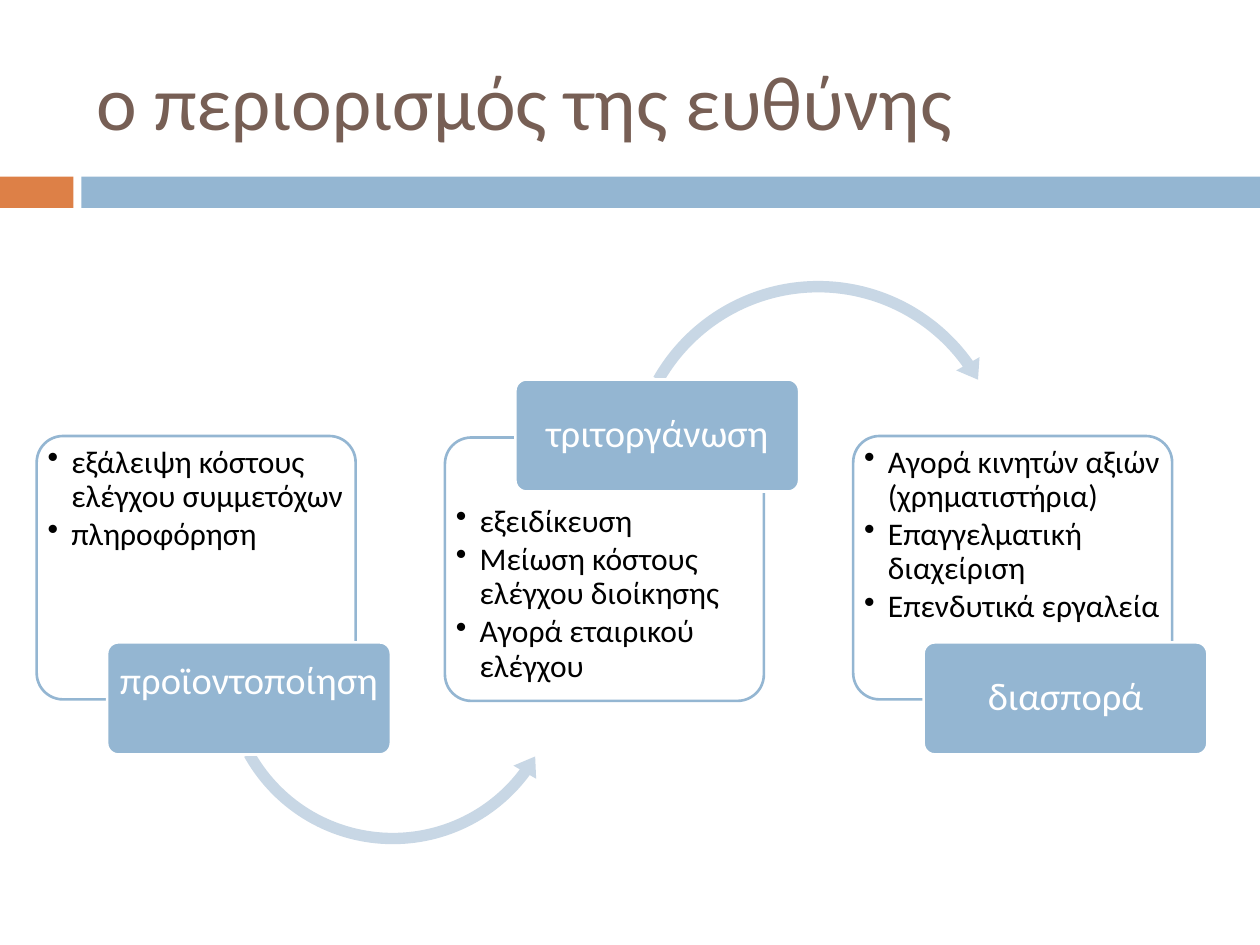
import pptx
import pptx.util
import pptx.oxml
import pptx.oxml.ns
import pptx.dml.color
import pptx.enum.shapes
import pptx.enum.text

Cm = pptx.util.Cm
Pt = pptx.util.Pt
RGB = pptx.dml.color.RGBColor
KIND = pptx.enum.shapes.MSO_SHAPE
ALIGN = pptx.enum.text.PP_ALIGN
MID = pptx.enum.text.MSO_ANCHOR.MIDDLE

BLUE = RGB(0x94, 0xB6, 0xD2)
PALE = RGB(0xC8, 0xD7, 0xE5)
RUST = RGB(0xDD, 0x80, 0x47)
BROWN = RGB(0x77, 0x5F, 0x55)
WHITE = RGB(0xFF, 0xFF, 0xFF)
BLACK = RGB(0, 0, 0)

LEFT, PITCH = 0.74, 8.23
LOW, HIGH = 12.95, 7.65
CARDS = [
    ("προϊοντοποίηση", LOW, 8.79, 8.89, 0.74,
     ["εξάλειψη κόστους ελέγχου συμμετόχων", "πληροφόρηση"]),
    ("τριτοργάνωση", HIGH, 8.82, 10.08, 0.08,
     ["εξειδίκευση", "Μείωση κόστους ελέγχου διοίκησης",
      "Αγορά εταιρικού ελέγχου"]),
    ("διασπορά", LOW, 8.79, 8.89, 0.08,
     ["Αγορά κινητών αξιών (χρηματιστήρια)", "Επαγγελματική διαχείριση",
      "Επενδυτικά εργαλεία"]),
]
ARROWS = [
    (KIND.LEFT_CIRCULAR_ARROW, (4.34, 10.01, 7.16, 7.16),
     (0.032, 3.947, 21.977, 90.52, 0.037)),
    (KIND.CIRCULAR_ARROW, (12.52, 5.51, 7.95, 7.95),
     (0.029, 3.526, 194.719, 125.755, 0.034)),
]


def apply(item, form):
    for key, val in form.items():
        setattr(item, key, val)


def add_shape(slide, kind, box, fill, line=None, adjust=()):
    shape = slide.shapes.add_shape(kind, *map(Cm, box))
    shape.shadow.inherit = False
    shape.fill.solid()
    shape.fill.fore_color.rgb = fill
    if line is None:
        shape.line.fill.background()
    else:
        shape.line.color.rgb = line
        shape.line.width = Pt(1.5)
    for spot, val in enumerate(adjust):
        shape.adjustments[spot] = val
    return shape


def add_text(slide, box, lines, size, color, frame, para, bullet=False):
    text = slide.shapes.add_textbox(*map(Cm, box)).text_frame
    apply(text, {"word_wrap": True, **frame})
    for spot, line in enumerate(lines):
        item = text.add_paragraph() if spot else text.paragraphs[0]
        item.text = line
        apply(item, para)
        if bullet:
            add_bullet(item)
        apply(item.runs[0].font, {"size": Pt(size), "name": "Calibri"})
        item.runs[0].font.color.rgb = color


def add_bullet(item):
    props = item._p.get_or_add_pPr()
    props.set("marL", str(Cm(0.48)))
    props.set("indent", str(-Cm(0.48)))
    mark = pptx.oxml.parse_xml(
        "<a:buChar %s char='•'/>" % pptx.oxml.ns.nsdecls("a"))
    props.append(mark)


def add_card(slide, left, top, words, lines):
    card = add_shape(slide, KIND.ROUNDED_RECTANGLE, (left, top, 6.43, 5.31),
                     WHITE, BLUE, [0.1])
    tint = card.fill._xPr.find(".//" + pptx.oxml.ns.qn("a:srgbClr"))
    tint.append(pptx.oxml.parse_xml(
        "<a:alpha %s val='90000'/>" % pptx.oxml.ns.nsdecls("a")))
    sides = ("left", "right", "top", "bottom")
    add_text(slide, (left + 0.12, words, 6.2, 3.91), lines, 18, BLACK,
             {"margin_" + side: Cm(0.1) for side in sides},
             {"line_spacing": 0.9, "space_after": Pt(2.5)}, bullet=True)


def add_label(slide, left, top, word, base):
    add_shape(slide, KIND.ROUNDED_RECTANGLE, (left, top, 5.72, 2.26),
              BLUE, WHITE, [0.1])
    frame = {"vertical_anchor": MID, "margin_left": Cm(0.13),
             "margin_right": Cm(0.13), "margin_top": Cm(0.08),
             "margin_bottom": Cm(base)}
    add_text(slide, (left + 0.07, top + 0.06, 5.58, 2.14), [word], 22, WHITE,
             frame, {"alignment": ALIGN.CENTER, "line_spacing": 0.9})


def main():
    deck = pptx.Presentation()
    apply(deck, {"slide_width": Cm(25.4), "slide_height": Cm(19.05)})
    slide = deck.slides.add_slide(deck.slide_layouts[6])
    add_shape(slide, KIND.RECTANGLE, (0, 3.56, 1.48, 0.63), RUST)
    add_shape(slide, KIND.RECTANGLE, (1.64, 3.56, 23.76, 0.63), BLUE)
    add_text(slide, (1.69, 0.64, 22.66, 2.74), ["ο περιορισμός της ευθύνης"],
             44, BROWN, {"vertical_anchor": MID}, {})
    for spot, (word, label, top, words, base, lines) in enumerate(CARDS):
        left = LEFT + spot * PITCH
        add_card(slide, left, top, words, lines)
        if spot < len(ARROWS):
            kind, box, adjust = ARROWS[spot]
            add_shape(slide, kind, box, PALE, adjust=adjust)
        add_label(slide, left + 1.42, label, word, base)
    deck.save("out.pptx")


if __name__ == "__main__":
    main()
